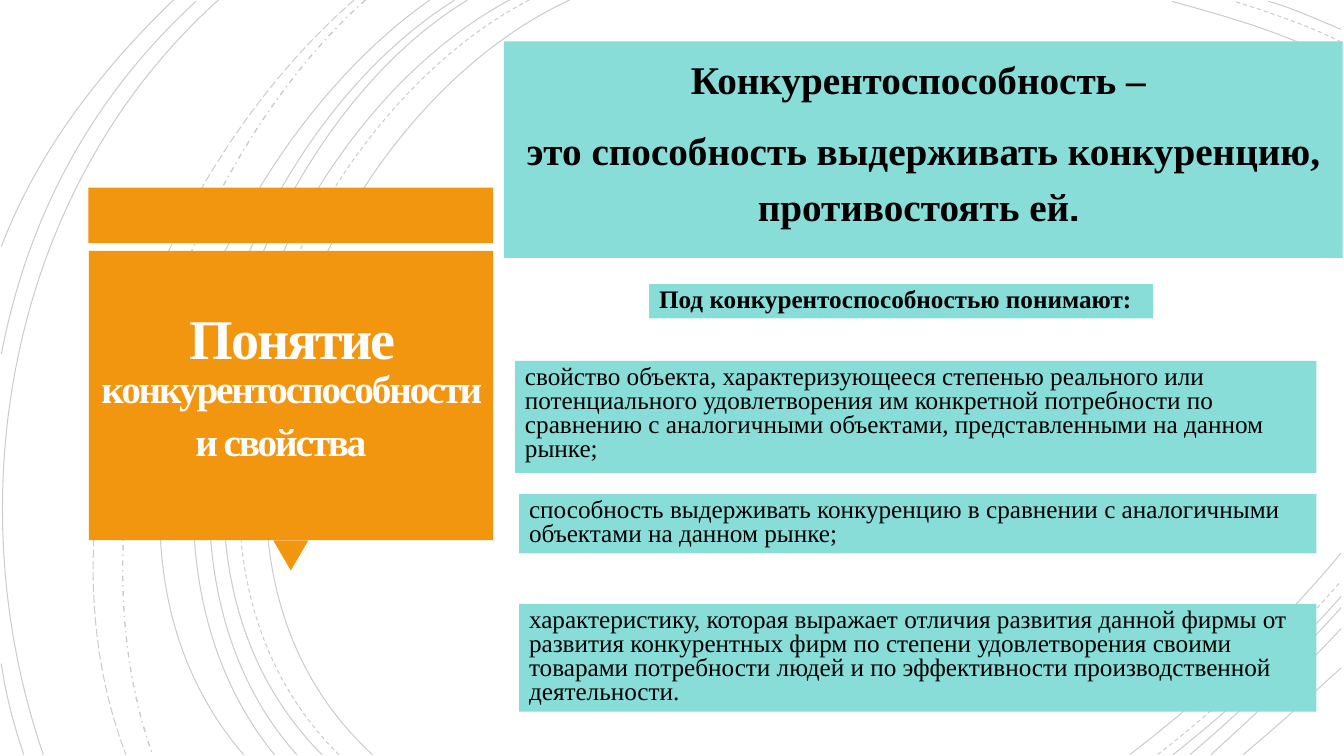
from dataclasses import dataclass

from lxml import etree
from pptx import Presentation
from pptx.dml.color import RGBColor
from pptx.enum import dml, shapes, text
from pptx.oxml import ns
from pptx.util import Pt


@dataclass(frozen=True)
class Theme:
    orange: str = "F3960F"
    teal: str = "88DDD8"
    white: str = "FFFEFF"
    black: str = "000000"
    serif: str = "Times New Roman"
    slab: str = "Roboto Slab"
    title_size: int = 40
    heading_size: int = 28
    text_size: int = 18
    arc_opacity: int = 20


THEME = Theme()
SOLID, DASH = dml.MSO_LINE.SOLID, dml.MSO_LINE.DASH
LONG_DASH, DASH_DOT = dml.MSO_LINE.LONG_DASH, dml.MSO_LINE.DASH_DOT
BOTTOM = 538.6
RIGHT = 958.3

# Tall arcs from top to bottom: top x, two control points, bottom x, dash, width
TALL_ARCS = [
    (406.8, (226.8, 82.8), (103, 388.8), 265.7, SOLID, 0.75),
    (378, (205.2, 90), (88.6, 386.6), 241.9, DASH, 0.75),
    (364.3, (194.4, 91.4), (79.2, 386.6), 229.7, SOLID, 0.75),
    (334.1, (175.7, 95.8), (79.2, 389.5), 211.7, SOLID, 0.75),
    (324.7, (166.3, 99.4), (69.8, 383.8), 195.8, SOLID, 0.75),
    (307.4, (156.2, 105.8), (38.2, 380.9), 173.5, SOLID, 0.75),
    (261.4, (126.7, 119.5), (46.8, 366.5), 108.7, DASH_DOT, 1),
    (252.7, (113, 121.7), (20.9, 359.3), 90, LONG_DASH, 0.75),
    (156.2, (7.9, 133.2), (-33.1, 352.8), 31, SOLID, 0.75),
]

# Short arcs in the corners: four Bezier points, dash
CORNER_ARCS = [
    ((140.4, 0.7), (66.2, 69.1), (20.2, 154.1), (1.4, 252.7), SOLID),
    ((0.7, 473.8), (4.3, 496.1), (10.1, 517.7), (17.3, BOTTOM), SOLID),
    ((123.8, 0), (72, 49.7), (26.6, 108), (1.4, 175.7), SOLID),
    ((RIGHT, 44.6), (920.2, 24.5), (876.9, 11.5), (836.6, 0.7), SOLID),
    ((RIGHT, 29.5), (933.8, 18), (907.2, 8.6), (882, 0.7), DASH),
    ((RIGHT, 20.9), (941, 13.7), (923.8, 6.5), (905.8, 0.7), SOLID),
    ((807.1, BOTTOM), (861.8, 496.8), (913.7, 447.8), (RIGHT, 394.6), SOLID),
    ((826.6, BOTTOM), (873.4, 502.6), (918, 460.8), (RIGHT, 415.4), DASH),
    ((838.1, BOTTOM), (880.6, 504.7), (921.6, 466.6), (RIGHT, 425.5), SOLID),
    ((850.3, BOTTOM), (888.5, 506.9), (924.5, 471.6), (RIGHT, 434.2), SOLID),
    ((864.7, BOTTOM), (897.1, 510.5), (928.8, 480.2), (RIGHT, 448.6), SOLID),
    ((888.5, BOTTOM), (912.2, 519.1), (935.3, 498.2), (RIGHT, 476.6), SOLID),
]

# Text panels: left, top, width, height, bold, wording
PANELS = [
    (370.8, 352.8, 569.5, 42.5, False,
     "способность выдерживать конкуренцию в сравнении с аналогичными "
     "объектами на данном рынке;"),
    (370.8, 431.3, 569.5, 77, False,
     "характеристику, которая выражает отличия развития данной фирмы от "
     "развития конкурентных фирм по степени удовлетворения своими товарами "
     "потребности людей и по эффективности производственной деятельности."),
    (367.9, 257.8, 572.4, 79.9, False,
     "свойство объекта, характеризующееся степенью реального или "
     "потенциального удовлетворения им конкретной потребности по сравнению "
     "с аналогичными объектами, представленными на данном рынке;"),
    (463.7, 203, 360, 24.5, True, "Под конкурентоспособностью понимают:"),
]


def add_arc(slide, points, dash, width=0.75):
    builder = slide.shapes.build_freeform(*points[0], scale=float(Pt(1)))
    builder.add_line_segments(points[1:], close=False)
    shape = builder.convert_to_shape()
    # Merge the three segments into one cubic curve
    segments = list(shape._element.iter(ns.qn("a:lnTo")))
    outline = segments[0].getparent()
    curve = etree.SubElement(outline, ns.qn("a:cubicBezTo"))
    for segment in segments:
        curve.append(segment[0])
        outline.remove(segment)
    shape.shadow.inherit = False
    shape.fill.background()
    shape.line.color.rgb = RGBColor.from_string(THEME.black)
    shape.line.width = Pt(width)
    shape.line.dash_style = dash
    color = shape.line._ln.find(".//" + ns.qn("a:srgbClr"))
    etree.SubElement(color, ns.qn("a:alpha"), val=str(THEME.arc_opacity * 1000))


def place(shape, left, top, width, height):
    shape.left, shape.top = Pt(left), Pt(top)
    shape.width, shape.height = Pt(width), Pt(height)


def set_fill(shape, color):
    shape.fill.solid()
    shape.fill.fore_color.rgb = RGBColor.from_string(color)


def add_block(slide, kind, box, color):
    shape = slide.shapes.add_shape(kind, *map(Pt, box))
    shape.shadow.inherit = False
    set_fill(shape, color)
    shape.line.fill.background()
    return shape


def set_frame(shape, anchor):
    frame = shape.text_frame
    frame.word_wrap = True
    frame.auto_size = text.MSO_AUTO_SIZE.NONE
    frame.vertical_anchor = anchor
    return frame


def format_paragraph(paragraph, alignment, line_spacing, before=0):
    paragraph.alignment = alignment
    paragraph.line_spacing = line_spacing
    paragraph.space_before = Pt(before)


def add_run(paragraph, wording, size, color, bold=True, font=THEME.serif):
    run = paragraph.add_run()
    run.text = wording
    run.font.name = font
    run.font.size = Pt(size)
    run.font.bold = bold
    run.font.color.rgb = RGBColor.from_string(color)
    return run


def fill_title(title):
    place(title, 56.9, 184.3, 303.1, 190.1)
    frame = set_frame(title, text.MSO_ANCHOR.MIDDLE)
    frame.margin_left = frame.margin_right = Pt(7.2)
    frame.margin_top = frame.margin_bottom = Pt(7.2)
    paragraph = frame.paragraphs[0]
    format_paragraph(paragraph, text.PP_ALIGN.CENTER, 0.85)
    for wording, size in (("Понятие ", THEME.title_size),
                          ("конкурентоспособности", THEME.heading_size),
                          ("\n", THEME.heading_size),
                          ("и свойства ", THEME.heading_size),
                          (" ", THEME.title_size)):
        if wording == "\n":
            paragraph.add_line_break()
            continue
        run = add_run(paragraph, wording, size, THEME.white)
        run.font._rPr.set("spc", "-150")


def fill_definition(body):
    place(body, 360, 29.5, 599, 154.8)
    set_fill(body, THEME.teal)
    frame = set_frame(body, text.MSO_ANCHOR.TOP)
    paragraphs = [
        [("Конкурентоспособность – ", THEME.serif)],
        [("это способность выдерживать конкуренцию, противостоять ей", THEME.serif),
         (". ", THEME.slab)],
    ]
    for index, runs in enumerate(paragraphs):
        paragraph = frame.add_paragraph() if index else frame.paragraphs[0]
        format_paragraph(paragraph, text.PP_ALIGN.CENTER, 1.2, before=10)
        properties = paragraph._p.get_or_add_pPr()
        properties.set("marL", "0")
        properties.set("indent", "0")
        etree.SubElement(properties, ns.qn("a:buNone"))
        for wording, font in runs:
            add_run(paragraph, wording, THEME.heading_size, THEME.black, font=font)


def add_panel(slide, left, top, width, height, bold, wording):
    panel = add_block(slide, shapes.MSO_SHAPE.RECTANGLE,
                      (left, top, width, height), THEME.teal)
    paragraph = set_frame(panel, text.MSO_ANCHOR.TOP).paragraphs[0]
    format_paragraph(paragraph, text.PP_ALIGN.LEFT, 0.8)
    add_run(paragraph, wording, THEME.text_size, THEME.black, bold)


def main():
    presentation = Presentation()
    presentation.slide_width, presentation.slide_height = Pt(960), Pt(540)
    slide = presentation.slides.add_slide(presentation.slide_layouts[1])
    title, body = slide.shapes.title, slide.placeholders[1]

    # Background arcs
    for top_x, upper, lower, bottom_x, dash, width in TALL_ARCS:
        add_arc(slide, ((top_x, 0), upper, lower, (bottom_x, BOTTOM)), dash, width)
    for *points, dash in CORNER_ARCS:
        add_arc(slide, points, dash)

    # Orange title plate with its pointer
    rectangle = shapes.MSO_SHAPE.RECTANGLE
    add_block(slide, rectangle, (63.2, 134, 289, 39.6), THEME.orange)
    pointer = add_block(slide, shapes.MSO_SHAPE.ISOSCELES_TRIANGLE,
                        (195.1, 385.9, 25.2, 21.6), THEME.orange)
    pointer.rotation = 180
    add_block(slide, rectangle, (63.5, 179.3, 288.7, 206.6), THEME.orange)

    # Title and definition, raised above the background
    for placeholder in (title, body):
        slide.shapes._spTree.append(placeholder._element)
    fill_title(title)
    fill_definition(body)

    # Meanings of the term
    for panel in PANELS:
        add_panel(slide, *panel)

    presentation.save("out.pptx")


if __name__ == "__main__":
    main()
